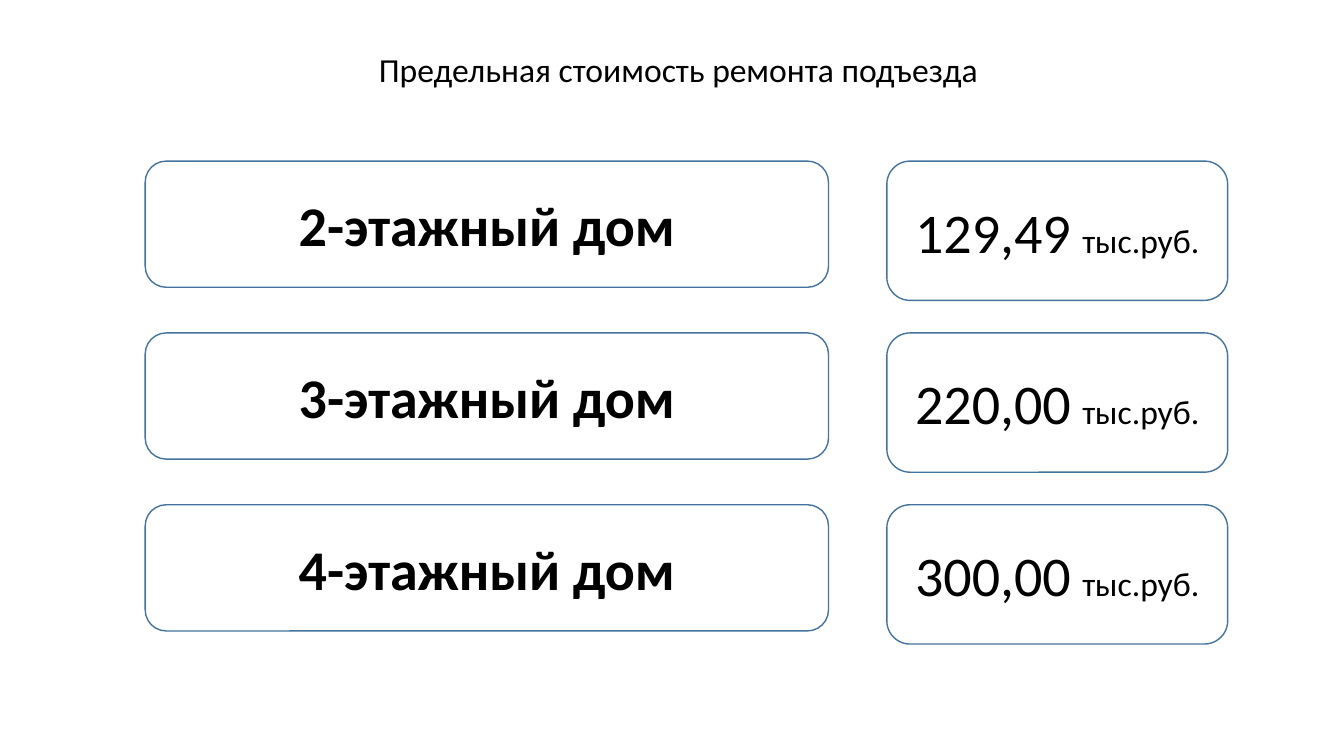
from dataclasses import dataclass

from pptx import Presentation
from pptx.dml.color import RGBColor
from pptx.enum.shapes import MSO_SHAPE as Preset
from pptx.enum.text import MSO_ANCHOR as Anchor, PP_ALIGN as Align
from pptx.slide import Slide
from pptx.text.text import TextFrame
from pptx.util import Cm, Pt

FONT = "Calibri"
BLACK = "000000"
BORDER = "43739E"
FIRST_ROW_TOP = 4.06
ROW_PITCH = 4.33


@dataclass(frozen=True)
class Column:
    """Place and size shared by the boxes of one column, in centimetres."""
    left: float
    width: float
    height: float


@dataclass(frozen=True)
class Piece:
    text: str
    size: float
    bold: bool = False


@dataclass(frozen=True)
class RepairLimit:
    house: str
    cost: str


HOUSES = Column(3.66, 17.22, 3.18)
COSTS = Column(22.35, 8.59, 3.51)
LIMITS = [
    RepairLimit("2-этажный дом", "129,49"),
    RepairLimit("3-этажный дом", "220,00"),
    RepairLimit("4-этажный дом", "300,00"),
]


def rgb(value: str) -> RGBColor:
    return RGBColor.from_string(value)


def write_centred(frame: TextFrame, pieces: list[Piece]) -> None:
    frame.word_wrap = True
    frame.vertical_anchor = Anchor.MIDDLE
    line = frame.paragraphs[0]
    line.alignment = Align.CENTER
    for piece in pieces:
        run = line.add_run()
        run.text = piece.text
        run.font.name = FONT
        run.font.size = Pt(piece.size)
        run.font.bold = piece.bold
        run.font.color.rgb = rgb(BLACK)


def add_heading(slide: Slide, text: str) -> None:
    heading = slide.shapes.add_textbox(Cm(2.49), Cm(1.3), Cm(29.21), Cm(0.99))
    write_centred(heading.text_frame, [Piece(text, 24)])
    heading.text_frame.paragraphs[0].line_spacing = 0.9


def add_box(slide: Slide, column: Column, top: float, pieces: list[Piece]) -> None:
    box = slide.shapes.add_shape(
        Preset.ROUNDED_RECTANGLE,
        Cm(column.left), Cm(top), Cm(column.width), Cm(column.height),
    )
    box.shadow.inherit = False
    box.fill.background()
    box.line.color.rgb = rgb(BORDER)
    box.line.width = Pt(1)
    write_centred(box.text_frame, pieces)


def main() -> None:
    deck = Presentation()
    deck.slide_width, deck.slide_height = Cm(33.87), Cm(19.05)
    slide = deck.slides.add_slide(deck.slide_layouts[6])

    add_heading(slide, "Предельная стоимость ремонта подъезда")
    for row, limit in enumerate(LIMITS):
        top = FIRST_ROW_TOP + row * ROW_PITCH
        add_box(slide, HOUSES, top, [Piece(limit.house, 40, bold=True)])
        add_box(slide, COSTS, top, [
            Piece(limit.cost, 40), Piece(" ", 36), Piece("тыс.руб.", 24),
        ])

    deck.save("out.pptx")


if __name__ == "__main__":
    main()
